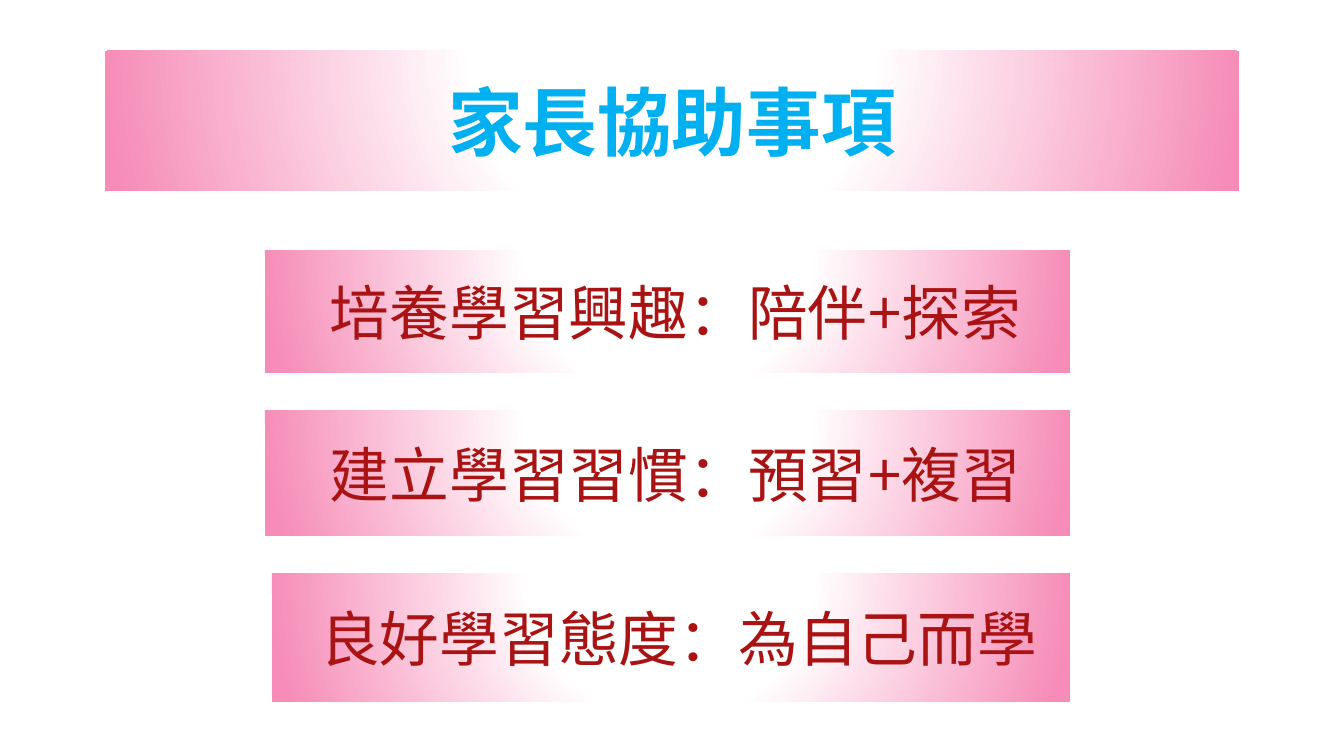
from pptx import Presentation
from pptx.dml.color import RGBColor
from pptx.enum.shapes import MSO_SHAPE as Shape
from pptx.enum.text import MSO_ANCHOR as Anchor, PP_ALIGN as Align
from pptx.oxml import parse_xml
from pptx.oxml.ns import nsdecls, qn
from pptx.util import Inches, Pt

EMU_PER_PX = 914400 / 134.4
FONT = "Noto Sans CJK JP"
WHITE = RGBColor(0xFF, 0xFF, 0xFF)
PINK = RGBColor(0xF6, 0x8C, 0xB7)
SKY = RGBColor(0x00, 0xB0, 0xF0)
CRIMSON = RGBColor(0xAA, 0x13, 0x13)
GLOW = ((0, WHITE), (35, WHITE), (100, PINK))

TIPS = (
    ("培養學習興趣：陪伴+探索", (265, 251, 805, 122)),
    ("建立學習習慣：預習+複習", (265, 411, 805, 125)),
    ("良好學習態度：為自己而學", (272, 574, 798, 128)),
)


def px(length):
    """Turn pixels into EMU."""
    return round(length * EMU_PER_PX)


def fill_glow(banner):
    """Fill a banner with a circular gradient, white inside and pink outside."""
    stops = "".join(
        f'<a:gs pos="{position * 1000}"><a:srgbClr val="{color}"/></a:gs>'
        for position, color in GLOW
    )
    glow = parse_xml(
        f'<a:gradFill {nsdecls("a")} rotWithShape="1"><a:gsLst>{stops}</a:gsLst>'
        '<a:path path="circle">'
        '<a:fillToRect l="50000" t="-80000" r="50000" b="180000"/>'
        "</a:path></a:gradFill>"
    )
    banner.fill.gradient()
    properties = banner.element.spPr
    properties.replace(properties.find(qn("a:gradFill")), glow)


def write_text(banner, text, *, size, color, bold=False, margin=0, indent=0):
    """Write one centred line into a banner."""
    frame = banner.text_frame
    frame.word_wrap = True
    frame.vertical_anchor = Anchor.MIDDLE
    frame.margin_left = frame.margin_right = Inches(0.1)
    frame.margin_top = frame.margin_bottom = Inches(0.1)
    line = frame.paragraphs[0]
    line.alignment = Align.CENTER
    layout = line._p.get_or_add_pPr()
    layout.set("marL", str(Inches(margin)))
    layout.set("indent", str(Inches(indent)))
    run = line.add_run()
    run.text = text
    run.font.name = FONT
    run.font.size = Pt(size)
    run.font.bold = bold
    run.font.color.rgb = color
    east_asian = parse_xml(f'<a:ea {nsdecls("a")} typeface="{FONT}"/>')
    run.font._element.find(qn("a:latin")).addnext(east_asian)


def add_banner(slide, box, text, **text_format):
    """Add a glowing rectangle with its text."""
    banner = slide.shapes.add_shape(Shape.RECTANGLE, *map(px, box))
    banner.shadow.inherit = False
    banner.line.fill.background()
    fill_glow(banner)
    write_text(banner, text, **text_format)


def main():
    """Build the slide and save it."""
    deck = Presentation()
    deck.slide_width, deck.slide_height = px(1344), px(756)
    slide = deck.slides.add_slide(deck.slide_layouts[6])
    add_banner(slide, (105, 51, 1134, 140), "家長協助事項",
               size=40, color=SKY, bold=True)
    for tip, box in TIPS:
        add_banner(slide, box, tip, size=32, color=CRIMSON,
                   margin=0.5, indent=-0.38)
    deck.save("out.pptx")


if __name__ == "__main__":
    main()
